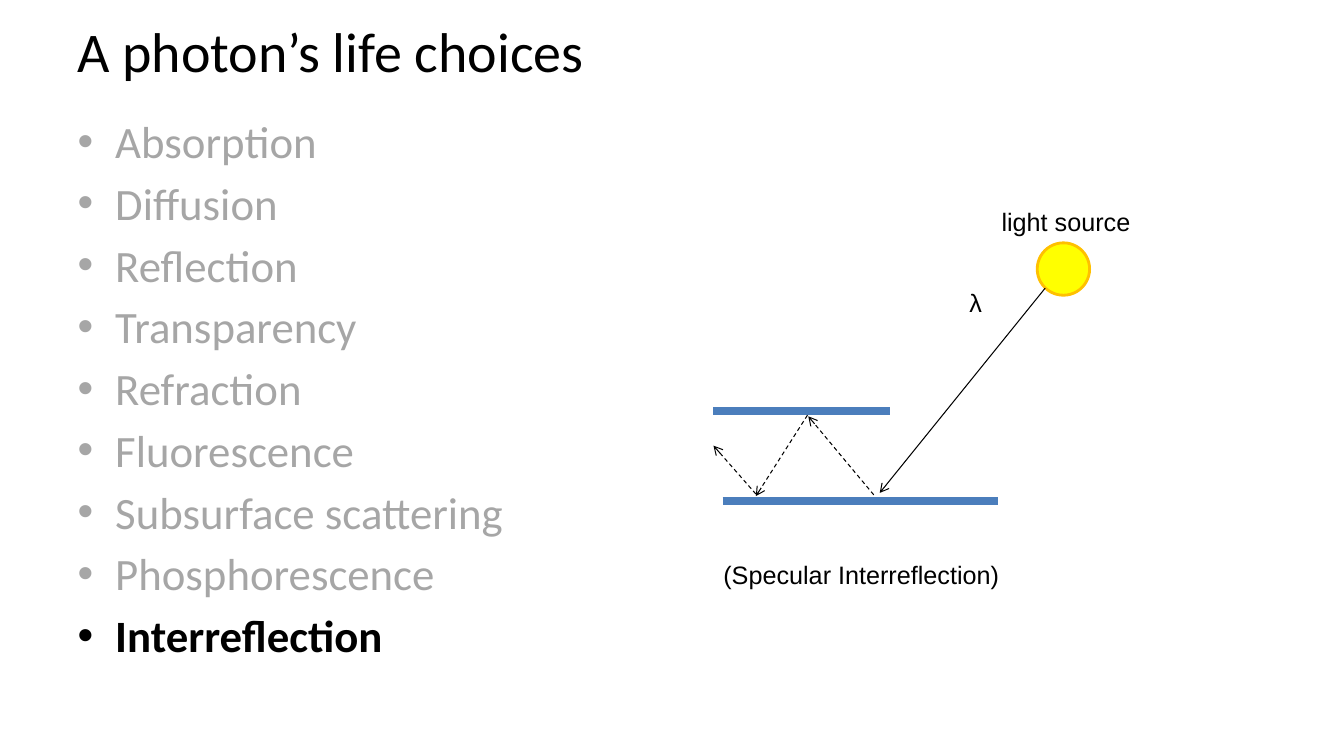
from pptx import Presentation
from pptx.dml.color import RGBColor
from pptx.enum.dml import MSO_LINE
from pptx.enum.shapes import MSO_CONNECTOR, MSO_SHAPE
from pptx.enum.text import MSO_ANCHOR, MSO_AUTO_SIZE, PP_ALIGN
from pptx.oxml.ns import qn
from pptx.util import Cm, Pt
from lxml.etree import SubElement

COLOURS = {
    "text": "000000",
    "faded": "A6A6A6",
    "surface": "4B7EBC",
    "sun": "FFFF00",
    "sun edge": "FFC000",
}
CHOICES = [
    "Absorption", "Diffusion", "Reflection", "Transparency", "Refraction",
    "Fluorescence", "Subsurface scattering", "Phosphorescence", "Interreflection",
]
CURRENT_CHOICE = "Interreflection"


class SlideBuilder:
    heading_font = "Calibri"
    label_font = "Arial"

    def __init__(self, slide):
        self.slide = slide

    def colour(self, name):
        return RGBColor.from_string(COLOURS[name])

    def format_runs(self, paragraph, font, size, colour="text", bold=False):
        for run in paragraph.runs:
            run.font.name = font
            run.font.size = Pt(size)
            run.font.bold = bold
            run.font.color.rgb = self.colour(colour)

    def place(self, shape, left, top, width, height):
        shape.left, shape.top = Cm(left), Cm(top)
        shape.width, shape.height = Cm(width), Cm(height)

    def title(self, text, *box):
        shape = self.slide.shapes.title
        self.place(shape, *box)
        frame = shape.text_frame
        frame.text = text
        frame.auto_size = MSO_AUTO_SIZE.NONE
        frame.vertical_anchor = MSO_ANCHOR.MIDDLE
        frame.paragraphs[0].alignment = PP_ALIGN.LEFT
        self.format_runs(frame.paragraphs[0], self.heading_font, 40)

    def bullets(self, items, current, *box):
        shape = self.slide.placeholders[1]
        self.place(shape, *box)
        frame = shape.text_frame
        frame.text = "\n".join(items)
        frame.auto_size = MSO_AUTO_SIZE.NONE
        for paragraph in frame.paragraphs:
            active = paragraph.text == current
            paragraph.space_before = Pt(5.7)
            self.format_runs(paragraph, self.heading_font, 32,
                             "text" if active else "faded", active)
            properties = paragraph._p.get_or_add_pPr()
            properties.set("marL", str(Cm(0.95)))
            properties.set("indent", str(-Cm(0.95)))
            SubElement(properties, qn("a:buFont"), typeface="Arial")
            SubElement(properties, qn("a:buChar"), char="•")

    def label(self, text, *box, wrap=False):
        shape = self.slide.shapes.add_textbox(*map(Cm, box))
        frame = shape.text_frame
        frame.text = text
        frame.word_wrap = wrap
        frame.auto_size = MSO_AUTO_SIZE.SHAPE_TO_FIT_TEXT
        self.format_runs(frame.paragraphs[0], self.label_font, 18)

    def line(self, start, end, colour, width):
        connector = self.slide.shapes.add_connector(
            MSO_CONNECTOR.STRAIGHT, *map(Cm, start + end))
        connector.line.color.rgb = self.colour(colour)
        connector.line.width = Pt(width)
        SubElement(connector._element.spPr, qn("a:effectLst"))
        return connector

    def surface(self, left, right, height):
        self.line((left, height), (right, height), "surface", 6)

    def ray(self, start, end, dashed=False):
        connector = self.line(start, end, "text", 0.75)
        if dashed:
            connector.line.dash_style = MSO_LINE.DASH
        SubElement(connector.line._get_or_add_ln(), qn("a:tailEnd"), type="arrow")

    def sun(self, left, top, diameter):
        shape = self.slide.shapes.add_shape(
            MSO_SHAPE.OVAL, *map(Cm, (left, top, diameter, diameter)))
        shape.shadow.inherit = False
        shape.fill.solid()
        shape.fill.fore_color.rgb = self.colour("sun")
        shape.line.color.rgb = self.colour("sun edge")
        shape.line.width = Pt(2)


def main():
    presentation = Presentation()
    presentation.slide_width, presentation.slide_height = Cm(33.87), Cm(19.05)
    builder = SlideBuilder(
        presentation.slides.add_slide(presentation.slide_layouts[1]))

    # Title and list of choices
    builder.title("A photon’s life choices", 1.7, 0, 30.48, 2.54)
    builder.bullets(CHOICES, CURRENT_CHOICE, 1.7, 2.74, 30.48, 14.28)

    # Light source and incoming ray
    builder.surface(18.21, 25.15, 12.62)
    builder.sun(26.14, 6.12, 1.32)
    builder.ray((26.34, 7.26), (22.17, 12.42))
    builder.label("λ", 24.18, 7.11, 0.84, 1.02)
    builder.label("light source", 24.99, 5.08, 3.81, 1.07, wrap=True)

    # Bounces between the two surfaces
    builder.surface(17.98, 22.43, 10.36)
    bounces = [
        ((22.02, 12.47), (20.37, 10.49)),
        ((20.35, 10.46), (19.05, 12.5)),
        ((19.05, 12.45), (17.98, 11.23)),
    ]
    for start, end in bounces:
        builder.ray(start, end, dashed=True)
    builder.label("(Specular Interreflection)", 17.98, 13.97, 7.75, 1.02)

    presentation.save("out.pptx")


if __name__ == "__main__":
    main()
